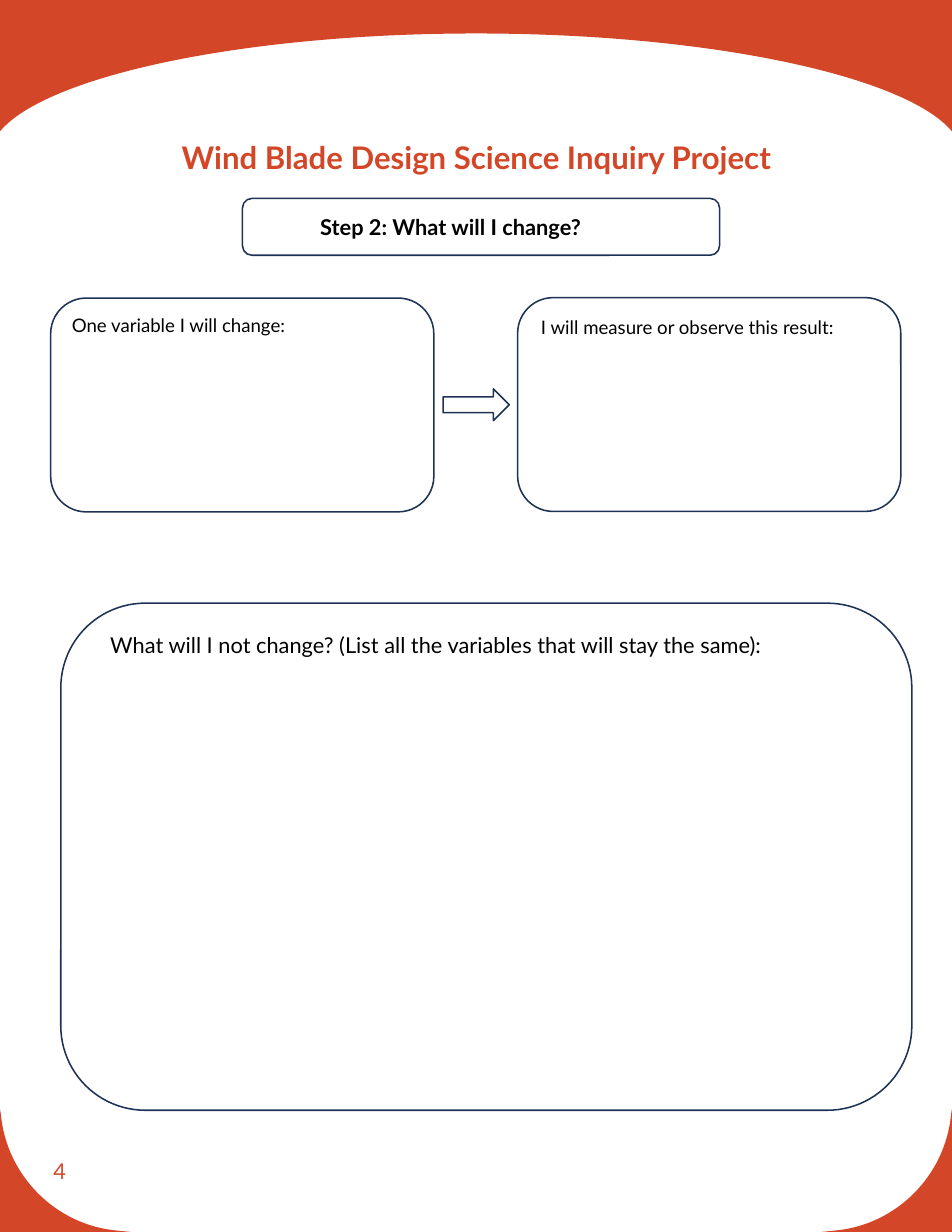
from pptx import Presentation
from pptx.dml.color import RGBColor
from pptx.enum.shapes import MSO_SHAPE
from pptx.enum.text import MSO_ANCHOR, MSO_AUTO_SIZE, PP_ALIGN
from pptx.oxml.ns import qn
from pptx.util import Cm, Pt
from lxml.etree import SubElement

# Content: places are left, top, width, height in cm
WIDTH, HEIGHT = 21.59, 27.94
TITLE = ("Wind Blade Design Science Inquiry Project", (0.91, 2.75, 19.79, 2.18))
PAGE_NUMBER = ("4", (0.96, 25.81, 4.85, 1.5))
LABELS = [
    ("Step 2: What will I change?", (7.01, 4.72, 10.49, 0.86), "large", True),
    ("One variable I will change:", (1.38, 6.99, 6.55, 0.76), "small", False),
    ("I will measure or observe this result:", (12.02, 7.04, 7.92, 0.76), "small", False),
    ("What will I not change? (List all the variables that will stay the same):",
     (2.25, 14.2, 17.04, 0.86), "large", False),
]
OUTLINES = [
    (MSO_SHAPE.ROUNDED_RECTANGLE, (5.5, 4.5, 10.82, 1.29)),
    (MSO_SHAPE.ROUNDED_RECTANGLE, (1.15, 6.76, 8.69, 4.85)),
    (MSO_SHAPE.ROUNDED_RECTANGLE, (11.74, 6.75, 8.69, 4.85)),
    (MSO_SHAPE.RIGHT_ARROW, (10.05, 8.82, 1.5, 0.72)),
    (MSO_SHAPE.ROUNDED_RECTANGLE, (1.38, 13.68, 19.3, 11.5)),
]
# Page frame: a segment of one point is a line, of three points a Bezier curve
ARCH = [
    [(0, 0)], [(WIDTH, 0)], [(WIDTH, 2.98)],
    [(20.55, 1.73), (16.1, 0.76), (10.8, 0.76)],
    [(5.49, 0.76), (1.04, 1.73), (0, 2.98)],
]
CORNER = [
    [(0, 25.15)], [(0.02, 25.27)],
    [(0.15, 26.67), (1.27, 27.79), (2.67, 27.91)],
    [(2.97, HEIGHT)], [(0, HEIGHT)],
]

THEME = {
    "font": "Lato",
    "accent": RGBColor(0xD3, 0x47, 0x28),
    "outline": RGBColor(0x1E, 0x32, 0x56),
    "text": RGBColor(0, 0, 0),
    "title": Pt(20), "large": Pt(14), "small": Pt(12), "line": Pt(1),
}


def mirror(segments):
    return [[(WIDTH - x, y) for x, y in segment] for segment in segments]


def add_band(page, segments):
    corners = [(Cm(x), Cm(y)) for segment in segments for x, y in segment]
    builder = page.shapes.build_freeform(*corners[0])
    builder.add_line_segments(corners[1:], close=True)
    band = builder.convert_to_shape()
    band.shadow.inherit = False
    band.fill.solid()
    band.fill.fore_color.rgb = THEME["accent"]
    band.line.fill.background()

    # Join the three points of each curve
    lines = iter(list(band.element.iter(qn("a:lnTo"))))
    for segment in segments[1:]:
        steps = [next(lines) for _ in segment]
        if len(steps) == 3:
            bezier = SubElement(steps[0].getparent(), qn("a:cubicBezTo"))
            steps[0].addprevious(bezier)
            for step in steps:
                bezier.append(step[0])
                step.getparent().remove(step)


def write(box, text, *, size, color="text", bold=False, align=PP_ALIGN.LEFT,
          anchor=MSO_ANCHOR.TOP, line_spacing=1.0):
    frame = box.text_frame
    frame.word_wrap = True
    frame.auto_size = MSO_AUTO_SIZE.NONE
    frame.vertical_anchor = anchor
    para = frame.paragraphs[0]
    para.alignment = align
    para.line_spacing = line_spacing
    para.space_before = Pt(0)
    span = para.add_run()
    span.text = text
    span.font.name = THEME["font"]
    span.font.size = THEME[size]
    span.font.bold = bold
    span.font.color.rgb = THEME[color]


def add_text(page, text, place, **style):
    write(page.shapes.add_textbox(*map(Cm, place)), text, **style)


def main():
    deck = Presentation()
    deck.slide_width, deck.slide_height = Cm(WIDTH), Cm(HEIGHT)
    page = deck.slides.add_slide(deck.slide_layouts[5])

    # Page frame
    for segments in (ARCH, CORNER, mirror(CORNER)):
        add_band(page, segments)

    # Title and page number
    text, place = TITLE
    title = page.shapes.title
    title.left, title.top, title.width, title.height = map(Cm, place)
    write(title, text, size="title", color="accent", bold=True,
          align=PP_ALIGN.CENTER, line_spacing=1.3)
    add_text(page, *PAGE_NUMBER, size="large", color="accent", anchor=MSO_ANCHOR.MIDDLE)

    # Answer boxes and arrow
    for kind, place in OUTLINES:
        shape = page.shapes.add_shape(kind, *map(Cm, place))
        shape.shadow.inherit = False
        shape.fill.background()
        shape.line.color.rgb = THEME["outline"]
        shape.line.width = THEME["line"]

    # Prompts
    for text, place, size, bold in LABELS:
        add_text(page, text, place, size=size, bold=bold)

    deck.save("out.pptx")


if __name__ == "__main__":
    main()
